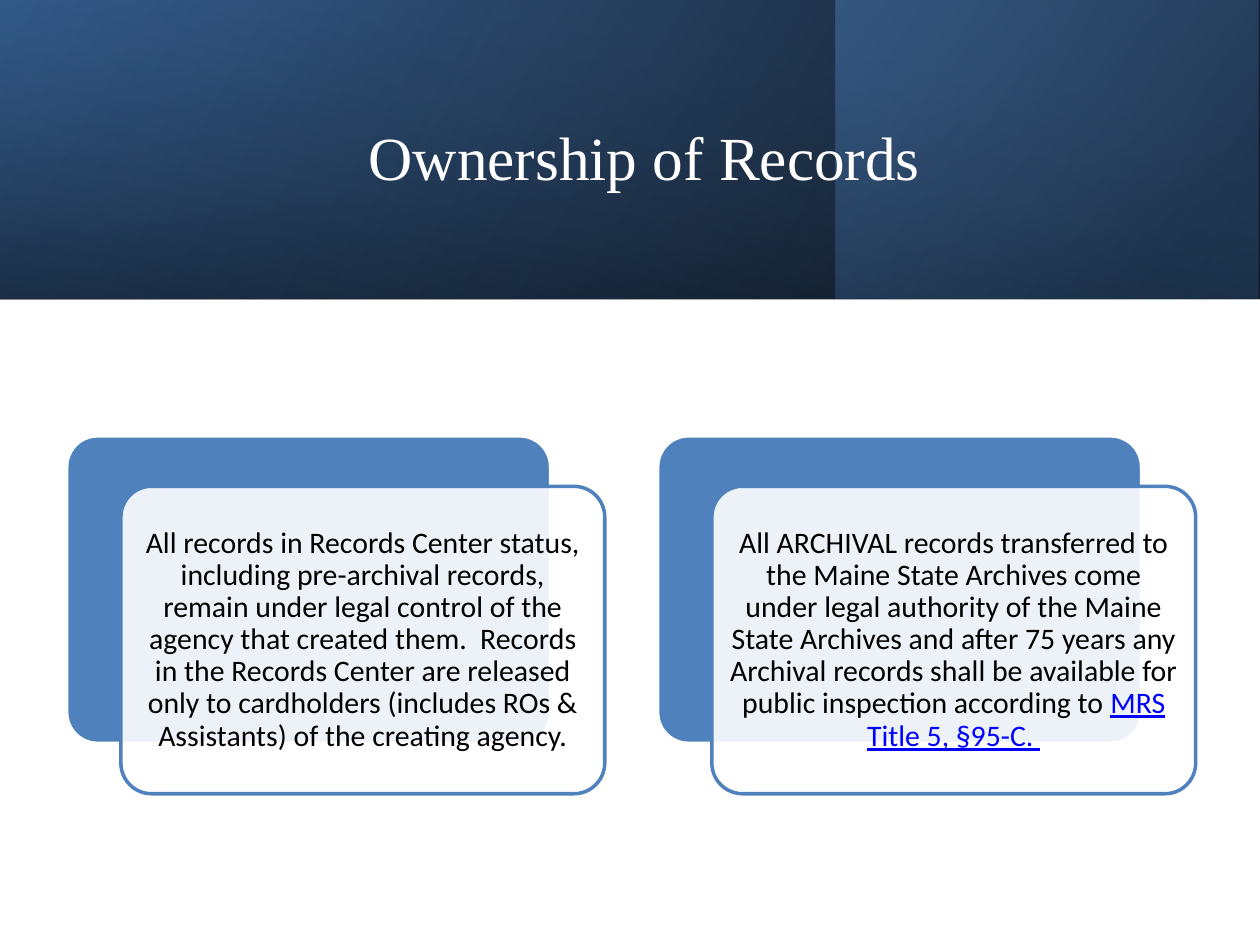
from lxml import etree
from pptx import Presentation
from pptx.dml.color import RGBColor
from pptx.enum.shapes import MSO_SHAPE
from pptx.enum.text import MSO_ANCHOR, PP_ALIGN
from pptx.oxml import parse_xml
from pptx.oxml.ns import qn
from pptx.util import Inches, Pt

RECT, ROUND = MSO_SHAPE.RECTANGLE, MSO_SHAPE.ROUNDED_RECTANGLE
MIDDLE, CENTER = MSO_ANCHOR.MIDDLE, PP_ALIGN.CENTER
NS = "http://schemas.openxmlformats.org/drawingml/2006/main"

WHITE = RGBColor(0xFF, 0xFF, 0xFF)
BLACK = RGBColor(0x00, 0x00, 0x00)
BLUE = RGBColor(0x4F, 0x81, 0xBD)
NAVY = RGBColor(0x25, 0x40, 0x61)
STEEL = RGBColor(0x37, 0x60, 0x92)
LINK = RGBColor(0x00, 0x00, 0xFF)

TITLE = "Ownership of Records"
CARDS = [
    [("All records in Records Center status, including pre-archival records, "
      "remain under legal control of the agency that created them.  Records "
      "in the Records Center are released only to cardholders (includes ROs & "
      "Assistants) of the creating agency.", False)],
    [("All ARCHIVAL records transferred to the Maine State Archives come "
      "under legal authority of the Maine State Archives and after 75 years "
      "any Archival records shall be available for public inspection "
      "according to ", False),
     ("MRS Title 5, §95-C. ", True)],
]
BANDS = [
    ((0, 0, 10, 2.37), 0, 330, [(0, BLACK, 96), (100, STEEL, 100)]),
    ((6.63, 0, 3.36, 2.37), 0, 320, [(19, NAVY, 68), (100, BLUE, 48)]),
    ((3.81, -3.81, 2.37, 10), 270, 350, [(23, STEEL, 16), (99, BLACK, 45)]),
]
LEFT, TOP, WIDE, HIGH = 0.53, 3.46, 3.84, 2.44
STEP, SHIFT_X, SHIFT_Y = 4.69, 0.43, 0.4


def add_shape(slide, kind, box):
    shape = slide.shapes.add_shape(kind, *map(Inches, box))
    shape.shadow.inherit = False
    return shape


def add_band(slide, box, turn, angle, stops):
    band = add_shape(slide, RECT, box)
    band.rotation = turn
    band.line.fill.background()
    band.fill.background()
    props = band._element.spPr
    props.find(qn("a:xfrm")).set("flipH", "1")
    marks = "".join(
        f'<a:gs pos="{pos * 1000}"><a:srgbClr val="{color}">'
        f'<a:alpha val="{alpha * 1000}"/></a:srgbClr></a:gs>'
        for pos, color, alpha in stops)
    grad = parse_xml(
        f'<a:gradFill xmlns:a="{NS}" rotWithShape="1"><a:gsLst>{marks}</a:gsLst>'
        f'<a:lin ang="{angle * 60000}" scaled="0"/></a:gradFill>')
    props.replace(props.find(qn("a:noFill")), grad)


def add_panel(slide, left, top, fill, line):
    panel = add_shape(slide, ROUND, (left, top, WIDE, HIGH))
    panel.adjustments[0] = 0.1
    panel.fill.solid()
    panel.fill.fore_color.rgb = fill
    panel.line.color.rgb = line
    panel.line.width = Pt(2)
    return panel


def add_card(slide, left, parts):
    add_panel(slide, left, TOP, BLUE, WHITE)
    card = add_panel(slide, left + SHIFT_X, TOP + SHIFT_Y, WHITE, BLUE)
    color = card._element.spPr.find(qn("a:solidFill"))[0]
    etree.SubElement(color, qn("a:alpha")).set("val", "90000")
    frame = card.text_frame
    frame.word_wrap = True
    frame.vertical_anchor = MIDDLE
    frame.margin_left = frame.margin_right = Inches(0.07)
    frame.margin_top = frame.margin_bottom = Inches(0.07)
    para = frame.paragraphs[0]
    para.alignment = CENTER
    para.line_spacing = 0.9
    for text, linked in parts:
        run = para.add_run()
        run.text = text
        style(run, "Calibri", 17, LINK if linked else BLACK)
        if linked:
            run.font.underline = True


def style(run, name, size, color):
    run.font.name = name
    run.font.size = Pt(size)
    run.font.color.rgb = color


def add_title(slide):
    title = slide.shapes.title
    title.left, title.top = Inches(1.13), Inches(0.38)
    title.width, title.height = Inches(7.97), Inches(1.72)
    frame = title.text_frame
    frame.text = TITLE
    frame.vertical_anchor = MIDDLE
    frame.paragraphs[0].alignment = CENTER
    style(frame.paragraphs[0].runs[0], "Times New Roman", 35, WHITE)
    slide.shapes._spTree.append(title._element)


def main():
    deck = Presentation()
    deck.slide_width, deck.slide_height = Inches(10), Inches(7.5)
    slide = deck.slides.add_slide(deck.slide_layouts[5])
    for band in BANDS:
        add_band(slide, *band)
    add_title(slide)
    for i, parts in enumerate(CARDS):
        add_card(slide, LEFT + i * STEP, parts)
    deck.save("out.pptx")


if __name__ == "__main__":
    main()
